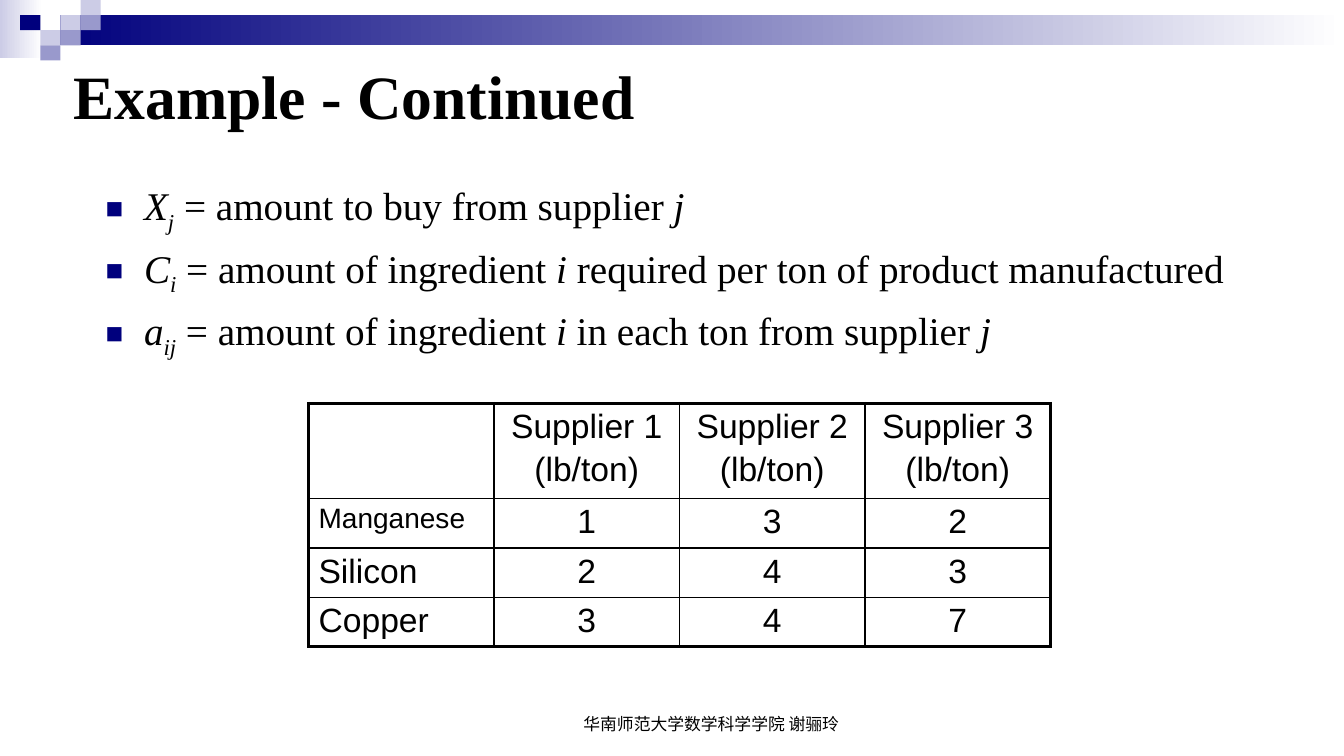
import pptx
import pptx.dml.color
import pptx.enum.shapes
import pptx.enum.text
import pptx.oxml
import pptx.oxml.ns
import pptx.util
import lxml.etree

Inches = pptx.util.Inches
Pt = pptx.util.Pt
ALIGN = pptx.enum.text.PP_ALIGN
ANCHOR = pptx.enum.text.MSO_ANCHOR
NAVY, MID, PALE, WHITE, BLACK = "00007D", "9999CC", "CCCCE6", "FFFFFF", "000000"
SERIF, SANS = "Times New Roman", "Arial"
TILES = [(3, 1, PALE), (4, 0, PALE), (4, 1, MID), (2, 2, PALE),
         (1, 1, NAVY), (3, 2, MID), (2, 3, MID)]
TERMS = [
    [("X", "i"), ("j", "sub"), (" = amount to buy from supplier ", ""), ("j", "i")],
    [("C", "i"), ("i", "sub"), (" = amount of ingredient ", ""), ("i", "i"),
     (" required per ton of product manufactured", "")],
    [("a", "i"), ("ij", "sub"), (" = amount of ingredient ", ""), ("i", "i"),
     (" in each ton from supplier ", ""), ("j", "i")],
]
ROWS = [
    ["", "Supplier 1\n(lb/ton)", "Supplier 2\n(lb/ton)", "Supplier 3\n(lb/ton)"],
    ["Manganese", "1", "3", "2"],
    ["Silicon", "2", "4", "3"],
    ["Copper", "3", "4", "7"],
]


def color(code):
    """Turn a hex string into a colour."""
    return pptx.dml.color.RGBColor.from_string(code)


def style(para, size, name, bold=False):
    """Set the font of a paragraph."""
    font = para.font
    font.size, font.name, font.bold = Pt(size), name, bold
    font.color.rgb = color(BLACK)


def block(slide, box, *fills):
    """Draw a rectangle with one colour or a blend of two."""
    shape = slide.shapes.add_shape(
        pptx.enum.shapes.MSO_SHAPE.RECTANGLE, *map(Inches, box))
    shape.shadow.inherit = False
    shape.line.fill.background()
    if len(fills) == 1:
        shape.fill.solid()
        shape.fill.fore_color.rgb = color(fills[0])
    else:
        shape.fill.gradient()
        shape.fill.gradient_angle = 0
        for stop, code, place in zip(shape.fill.gradient_stops, fills, (0, 1)):
            stop.color.rgb = color(code)
            stop.position = place


def banner(slide, left, top, width):
    """Draw the blended bar and its tiles."""
    step, high = 0.2, 0.15
    block(slide, (left, top, 0.42, 0.58), PALE, WHITE)
    block(slide, (left + 0.6, top + high, width - 0.6, 2 * high), NAVY, WHITE)
    for col, row, code in TILES:
        block(slide, (left + col * step, top + row * high, step, high), code)


def frame(slide, box, anchor):
    """Add a wrapping text box and return its text frame."""
    text = slide.shapes.add_textbox(*map(Inches, box)).text_frame
    text.word_wrap = True
    text.vertical_anchor = anchor
    return text


def label(slide, box, words, size, anchor, align, bold=False):
    """Write one line of serif text."""
    para = frame(slide, box, anchor).paragraphs[0]
    para.text = words
    para.alignment = align
    style(para, size, SERIF, bold)


def bullet(para):
    """Give a paragraph a navy square and a hanging indent."""
    props = para._p.get_or_add_pPr()
    props.set("marL", str(Inches(0.38)))
    props.set("indent", str(-Inches(0.38)))
    space = pptx.oxml.ns.nsdecls("a")
    for part in (f'<a:buClr {space}><a:srgbClr val="{NAVY}"/></a:buClr>',
                 f'<a:buSzPct {space} val="75000"/>',
                 f'<a:buFont {space} typeface="{SANS}"/>',
                 f'<a:buChar {space} char="■"/>'):
        props.append(pptx.oxml.parse_xml(part))


def terms(slide, box):
    """List the symbols and their meanings."""
    text = frame(slide, box, ANCHOR.TOP)
    for index, parts in enumerate(TERMS):
        para = text.add_paragraph() if index else text.paragraphs[0]
        bullet(para)
        style(para, 28, SERIF)
        if index:
            para.space_before = Pt(6.5)
        for words, kind in parts:
            run = para.add_run()
            run.text = words
            run.font.italic = kind != ""
            if kind == "sub":
                run.font._element.set("baseline", "-25000")


def border(cell, sides):
    """Rule the four sides of a cell, given widths by side."""
    props = cell._tc.get_or_add_tcPr()
    for side, width in sides.items():
        line = lxml.etree.SubElement(
            props, pptx.oxml.ns.qn("a:ln" + side), w=str(Pt(width)))
        solid = lxml.etree.SubElement(line, pptx.oxml.ns.qn("a:solidFill"))
        lxml.etree.SubElement(solid, pptx.oxml.ns.qn("a:srgbClr"), val=BLACK)


def supply(slide, left, top, width):
    """Build the table of ingredients by supplier."""
    count, wide = len(ROWS), len(ROWS[0])
    high = 0.47
    head = 0.91
    table = slide.shapes.add_table(
        count, wide, Inches(left), Inches(top), Inches(width),
        Inches(head + high * (count - 1))).table
    table.first_row = table.horz_banding = False
    for col in table.columns:
        col.width = Inches(width / wide)
    for r, words in enumerate(ROWS):
        table.rows[r].height = Inches(high if r else head)
        for c, word in enumerate(words):
            cell = table.cell(r, c)
            cell.margin_top, cell.margin_bottom = Inches(0.05), Inches(0.04)
            edges = {"L": c == 0, "R": c == wide - 1, "T": r == 0, "B": r == count - 1}
            border(cell, {side: 2.25 if edge else 1 for side, edge in edges.items()})
            cell.fill.background()
            cell.text = word
            for index, para in enumerate(cell.text_frame.paragraphs):
                para.alignment = ALIGN.CENTER if c else ALIGN.LEFT
                style(para, 20 if word == "Manganese" else 24, SANS)
                if index:
                    para.space_before = Pt(4)


def main():
    """Build and save the slide."""
    deck = pptx.Presentation()
    deck.slide_width, deck.slide_height = Inches(13.33), Inches(7.5)
    slide = deck.slides.add_slide(deck.slide_layouts[6])
    banner(slide, 0, 0, 13.33)
    label(slide, (0.63, 0.32, 11.33, 1.25), "Example - Continued", 44,
          ANCHOR.MIDDLE, ALIGN.LEFT, True)
    terms(slide, (0.95, 1.75, 11.58, 2.19))
    supply(slide, 3.06, 4, 7.36)
    label(slide, (4.89, 6.83, 4.33, 0.5), "华南师范大学数学科学学院 谢骊玲", 12,
          ANCHOR.BOTTOM, ALIGN.CENTER)
    deck.save("out.pptx")


if __name__ == "__main__":
    main()
